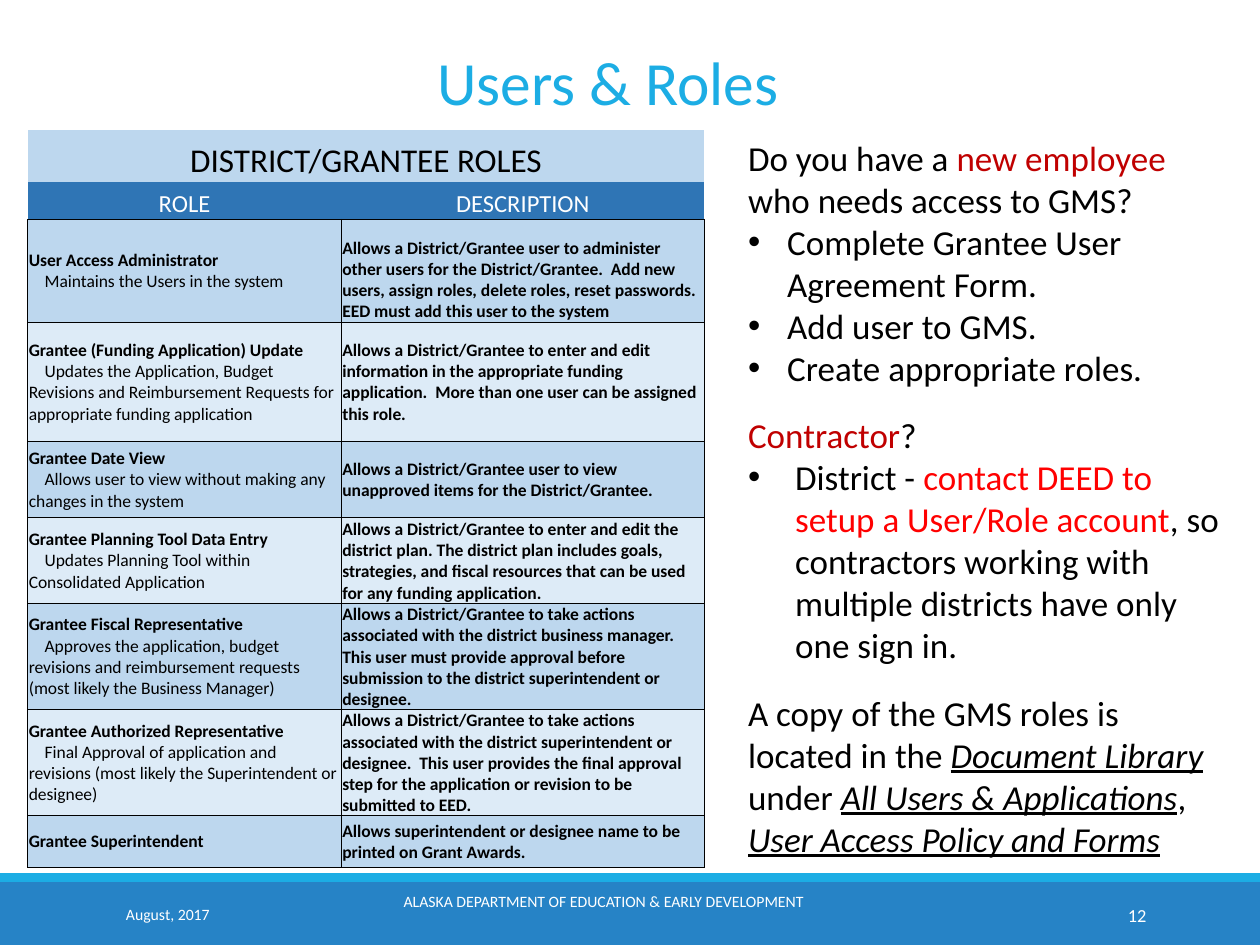
from lxml.etree import SubElement
from pptx import Presentation
from pptx.dml.color import RGBColor
from pptx.enum.shapes import MSO_SHAPE
from pptx.enum.text import MSO_ANCHOR, PP_ALIGN
from pptx.oxml.ns import qn
from pptx.util import Cm, Pt

COLORS = {
    "black": "000000", "white": "FFFFFF", "sky": "1CADE4", "footer": "2683C6",
    "header": "2F75B5", "dark_row": "BDD7EE", "light_row": "DDEBF7",
    "dark_red": "C00000", "red": "FF0000",
}

ROLES = [
    ("User Access Administrator", "Maintains the Users in the system",
     "Allows a District/Grantee user to administer other users for the District/Grantee.  Add new "
     "users, assign roles, delete roles, reset passwords.  EED must add this user to the system"),
    ("Grantee (Funding Application) Update",
     "Updates the Application, Budget Revisions and Reimbursement Requests for appropriate "
     "funding application",
     "Allows a District/Grantee to enter and edit information in the appropriate funding "
     "application.  More than one user can be assigned this role."),
    ("Grantee Date View", "Allows user to view without making any changes in the system",
     "Allows a District/Grantee user to view unapproved items for the District/Grantee."),
    ("Grantee Planning Tool Data Entry", "Updates Planning Tool within Consolidated Application",
     "Allows a District/Grantee to enter and edit the district plan. The district plan includes "
     "goals, strategies, and fiscal resources that can be used for any funding application."),
    ("Grantee Fiscal Representative",
     "Approves the application, budget revisions and reimbursement requests (most likely the "
     "Business Manager)",
     "Allows a District/Grantee to take actions associated with the district business manager.  "
     "This user must provide approval before submission to the district superintendent or designee."),
    ("Grantee Authorized Representative",
     "Final Approval of application and revisions (most likely the Superintendent or designee)",
     "Allows a District/Grantee to take actions associated with the district superintendent or "
     "designee.  This user provides the final approval step for the application or revision to be "
     "submitted to EED."),
    ("Grantee Superintendent", None,
     "Allows superintendent or designee name to be printed on Grant Awards."),
]
COLUMN_WIDTHS = [6.32, 7.32]
ROW_HEIGHTS = [1.04, 0.76, 2.08, 2.39, 1.55, 1.65, 2.08, 2.13, 1.04]

LINK = {"italic": True, "underline": True}
STEP = {"hanging": 0.79}
GUIDANCE = [
    ({}, [("Do you have a ", {}), ("new employee ", {"color": "dark_red"}),
          ("who needs access to GMS?", {})]),
    (STEP, [("Complete Grantee User Agreement Form.", {})]),
    (STEP, [("Add user to GMS.", {})]),
    (STEP, [("Create appropriate roles.", {})]),
    ({"before": 14.5}, [("Contractor", {"color": "dark_red"}), ("?", {})]),
    ({"hanging": 0.95}, [
        ("District - ", {}), ("contact DEED to setup a User/Role account", {"color": "red"}),
        (", so contractors working with multiple districts have only one sign in.", {})]),
    ({"before": 14.5}, [
        ("A copy of the GMS roles is located in the ", {}), ("Document Library", LINK),
        (" under ", {}), ("All Users & Applications", LINK), (", ", {}),
        ("User Access Policy and Forms", LINK)]),
]


def rgb(name):
    return RGBColor.from_string(COLORS[name])


def add_text(paragraph, text, size=10, color="black", bold=False, italic=False,
             underline=False, align=None):
    run = paragraph.add_run()
    run.text = text
    font = run.font
    font.name, font.size, font.color.rgb = "Calibri", Pt(size), rgb(color)
    font.bold, font.italic, font.underline = bold, italic, underline
    if align is not None:
        paragraph.alignment = align


def set_indent(paragraph, first, margin=0, bullet=None):
    properties = paragraph._p.get_or_add_pPr()
    properties.set("marL", str(Cm(margin)))
    properties.set("indent", str(Cm(first)))
    if bullet:
        SubElement(properties, qn("a:buFont")).set("typeface", "Arial")
        SubElement(properties, qn("a:buChar")).set("char", bullet)


class SlideBuilder:
    def __init__(self, presentation):
        self.slide = presentation.slides.add_slide(presentation.slide_layouts[5])

    def bar(self, top, height, color):
        shape = self.slide.shapes.add_shape(
            MSO_SHAPE.RECTANGLE, 0, Cm(top), Cm(25.4), Cm(height))
        shape.shadow.inherit = False
        shape.fill.solid()
        shape.fill.fore_color.rgb = rgb(color)
        shape.line.fill.background()

    def title(self, text, left, top, width, height):
        shape = self.slide.shapes.title
        shape.left, shape.top, shape.width, shape.height = map(Cm, (left, top, width, height))
        shape.text_frame.vertical_anchor = MSO_ANCHOR.MIDDLE
        paragraph = shape.text_frame.paragraphs[0]
        paragraph.line_spacing = 0.9
        add_text(paragraph, text, size=35.1, color="sky", align=PP_ALIGN.CENTER)

    def text_box(self, left, top, width, height, anchor=MSO_ANCHOR.TOP):
        frame = self.slide.shapes.add_textbox(
            Cm(left), Cm(top), Cm(width), Cm(height)).text_frame
        frame.word_wrap = True
        frame.vertical_anchor = anchor
        return frame

    def footer(self, text, left, top, width, align, size=9):
        frame = self.text_box(left, top, width, 1.02, MSO_ANCHOR.MIDDLE)
        add_text(frame.paragraphs[0], text, size=size, color="white", align=align)

    def guidance(self, items, left, top, width, height):
        frame = self.text_box(left, top, width, height)
        for number, (layout, runs) in enumerate(items):
            paragraph = frame.add_paragraph() if number else frame.paragraphs[0]
            if "hanging" in layout:
                set_indent(paragraph, -layout["hanging"], layout["hanging"], "•")
            if "before" in layout:
                paragraph.space_before = Pt(layout["before"])
            for text, style in runs:
                add_text(paragraph, text, size=20, **style)

    def cell(self, cell, fill, anchor, borders):
        cell.margin_left = cell.margin_right = cell.margin_top = Cm(0.02)
        cell.margin_bottom = 0
        cell.vertical_anchor = anchor
        properties = cell._tc.get_or_add_tcPr()
        for side in "LRTB":
            line = SubElement(properties, qn(f"a:ln{side}"))
            if side in borders:
                line.set("w", str(Pt(0.5)))
                solid = SubElement(line, qn("a:solidFill"))
                SubElement(solid, qn("a:srgbClr")).set("val", COLORS["black"])
            else:
                SubElement(line, qn("a:noFill"))
        cell.fill.solid()
        cell.fill.fore_color.rgb = rgb(fill)
        return cell.text_frame

    def roles_table(self, left, top):
        table = self.slide.shapes.add_table(
            len(ROW_HEIGHTS), len(COLUMN_WIDTHS), Cm(left), Cm(top),
            Cm(sum(COLUMN_WIDTHS)), Cm(sum(ROW_HEIGHTS))).table
        table.first_row = table.horz_banding = False
        for column, width in zip(table.columns, COLUMN_WIDTHS):
            column.width = Cm(width)
        for row, height in zip(table.rows, ROW_HEIGHTS):
            row.height = Cm(height)

        table.cell(0, 0).merge(table.cell(0, 1))
        headings = [(0, 0, "DISTRICT/GRANTEE ROLES", 19, "black", "dark_row", ""),
                    (1, 0, "ROLE", 14, "white", "header", "B"),
                    (1, 1, "DESCRIPTION", 14, "white", "header", "B")]
        for row, column, text, size, color, fill, borders in headings:
            frame = self.cell(table.cell(row, column), fill, MSO_ANCHOR.BOTTOM, borders)
            add_text(frame.paragraphs[0], text, size=size, color=color, align=PP_ALIGN.CENTER)

        for number, (role, duty, description) in enumerate(ROLES):
            fill = "light_row" if number % 2 else "dark_row"
            frame = self.cell(table.cell(number + 2, 0), fill, MSO_ANCHOR.MIDDLE, "LRTB")
            add_text(frame.paragraphs[0], role, bold=True)
            if duty:
                paragraph = frame.add_paragraph()
                set_indent(paragraph, 0.32)
                add_text(paragraph, duty)
            anchor = MSO_ANCHOR.MIDDLE if number else MSO_ANCHOR.BOTTOM
            frame = self.cell(table.cell(number + 2, 1), fill, anchor, "LRTB")
            add_text(frame.paragraphs[0], description, bold=True)


def main():
    presentation = Presentation()
    presentation.slide_width, presentation.slide_height = Cm(25.4), Cm(19.05)
    builder = SlideBuilder(presentation)
    builder.bar(17.78, 1.27, "footer")
    builder.bar(17.6, 0.18, "sky")
    builder.footer("August, 2017", 2.29, 17.93, 5.16, PP_ALIGN.LEFT)
    builder.footer("ALASKA DEPARTMENT OF EDUCATION & EARLY DEVELOPMENT",
                   7.4, 17.65, 9.53, PP_ALIGN.CENTER)
    builder.footer("12", 20.62, 17.93, 2.74, PP_ALIGN.RIGHT, size=10.5)
    builder.guidance(GUIDANCE, 14.83, 2.62, 10.24, 14.96)
    builder.title("Users & Roles", 0.81, 0.84, 22.89, 1.78)
    builder.roles_table(0.56, 2.62)
    presentation.save("out.pptx")


if __name__ == "__main__":
    main()
